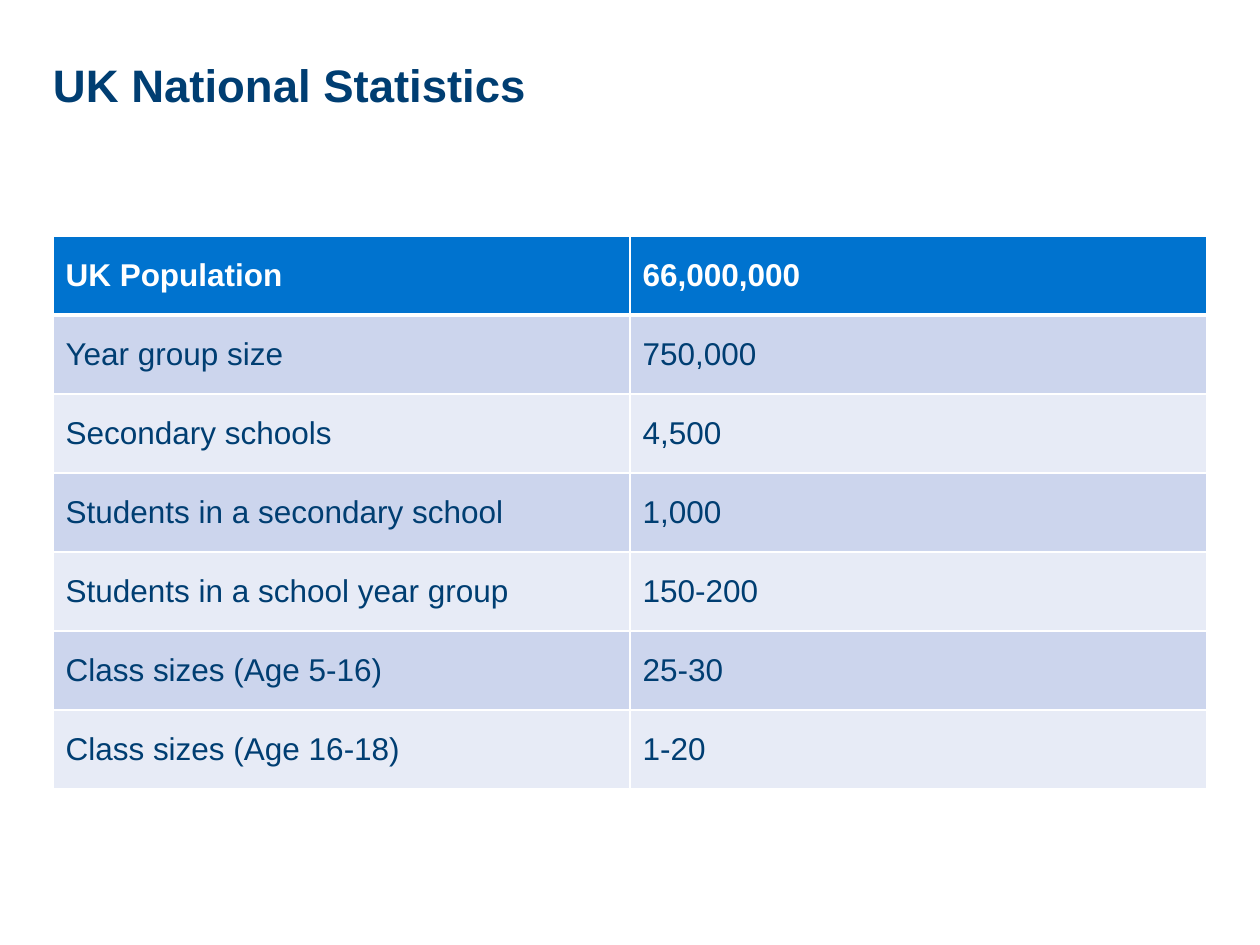
from dataclasses import dataclass

from lxml.etree import SubElement
from pptx import Presentation
from pptx.dml.color import RGBColor
from pptx.enum.text import MSO_ANCHOR as Anchor, PP_ALIGN as Align
from pptx.oxml.ns import qn
from pptx.util import Emu, Pt


@dataclass(frozen=True)
class Theme:
    font: str = "Arial"
    navy: str = "003E72"
    header: str = "0073CF"
    bands: tuple = ("CCD5ED", "E7EBF6")
    white: str = "FFFFFF"
    title_size: int = 26
    table_size: int = 18


theme = Theme()
EMU_PER_PX = 914400 / 126


def px(length):
    return Emu(round(length * EMU_PER_PX))


def write(text_frame, text, size, color, bold):
    paragraph = text_frame.paragraphs[0]
    paragraph.alignment = Align.LEFT
    run = paragraph.add_run()
    run.text = text
    run.font.name = theme.font
    run.font.size = Pt(size)
    run.font.bold = bold
    run.font.color.rgb = RGBColor.from_string(color)


statistics = [
    ("UK Population", "66,000,000"),
    ("Year group size", "750,000"),
    ("Secondary schools", "4,500"),
    ("Students in a secondary school", "1,000"),
    ("Students in a school year group", "150-200"),
    ("Class sizes (Age 5-16)", "25-30"),
    ("Class sizes (Age 16-18)", "1-20"),
]
LEFT, WIDTH = 53, 1154
TABLE_TOP, ROW_HEIGHT = 236, 79

presentation = Presentation()
presentation.slide_width, presentation.slide_height = px(1260), px(945)
slide = presentation.slides.add_slide(presentation.slide_layouts[5])

title = slide.shapes.title
title.left, title.top, title.width, title.height = px(LEFT), px(55), px(WIDTH), px(58)
title_frame = title.text_frame
title_frame.margin_left = title_frame.margin_right = 0
title_frame.margin_top = title_frame.margin_bottom = 0
title_frame.vertical_anchor = Anchor.MIDDLE
title_frame.word_wrap = True
write(title_frame, "UK National Statistics", theme.title_size, theme.navy, True)

table = slide.shapes.add_table(
    len(statistics), 2, px(LEFT), px(TABLE_TOP), px(WIDTH), px(ROW_HEIGHT * len(statistics))
).table
table.horz_banding = False
for column in table.columns:
    column.width = px(WIDTH // 2)

for row_index, values in enumerate(statistics):
    table.rows[row_index].height = px(ROW_HEIGHT)
    is_header = row_index == 0
    fill_color = theme.header if is_header else theme.bands[(row_index - 1) % 2]
    text_color = theme.white if is_header else theme.navy
    border_widths = {
        "a:lnL": 1,
        "a:lnR": 1,
        "a:lnT": 3 if row_index == 1 else 1,
        "a:lnB": 3 if is_header else 1,
    }
    for column_index, value in enumerate(values):
        cell = table.cell(row_index, column_index)
        cell.vertical_anchor = Anchor.MIDDLE
        write(cell.text_frame, value, theme.table_size, text_color, is_header)
        # Borders must precede the fill in the cell properties.
        properties = cell._tc.get_or_add_tcPr()
        for tag, width in border_widths.items():
            line = SubElement(properties, qn(tag), w=str(Pt(width)))
            line_fill = SubElement(line, qn("a:solidFill"))
            SubElement(line_fill, qn("a:srgbClr"), val=theme.white)
        cell.fill.solid()
        cell.fill.fore_color.rgb = RGBColor.from_string(fill_color)

presentation.save("out.pptx")
